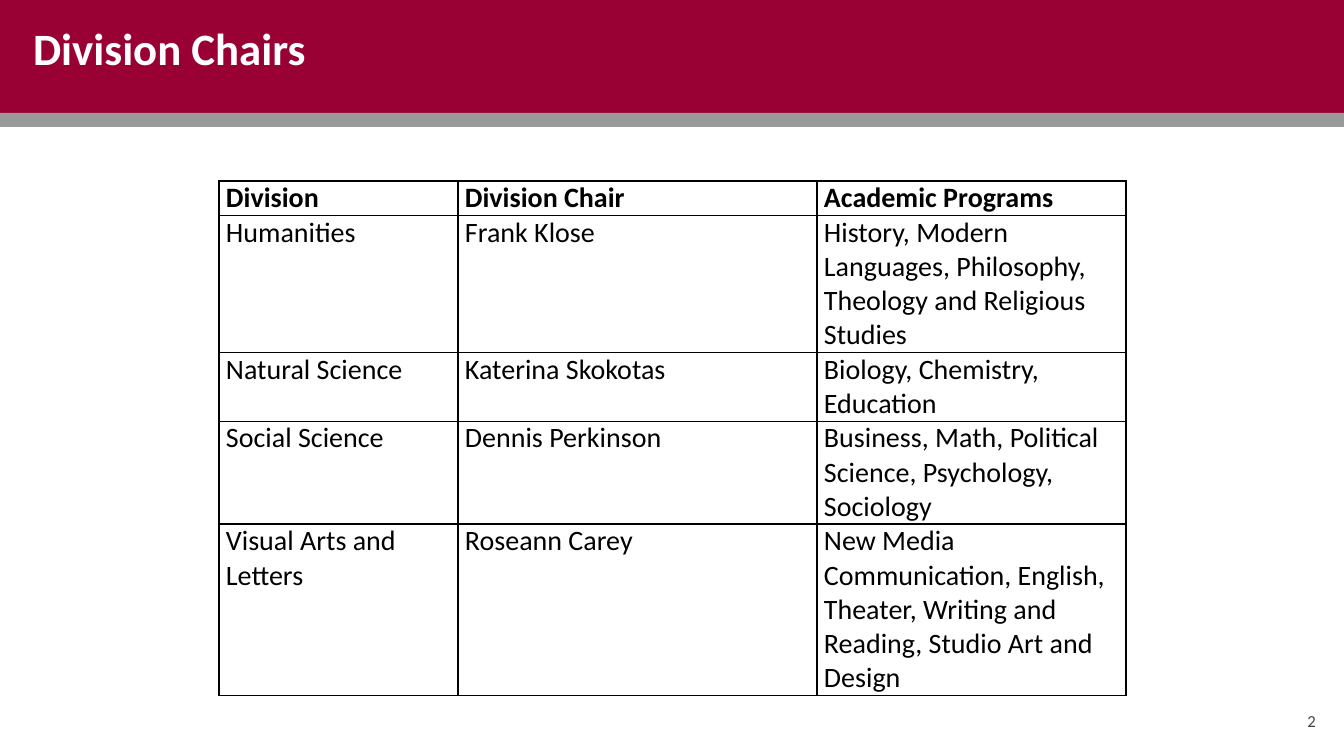
from lxml import etree
from pptx import Presentation
from pptx.dml.color import RGBColor
from pptx.enum.shapes import MSO_SHAPE as Shape
from pptx.enum.text import MSO_ANCHOR as Anchor, PP_ALIGN as Align
from pptx.oxml import parse_xml
from pptx.oxml.ns import nsdecls, qn
from pptx.util import Pt

TITLE = "Division Chairs"
PAGE_NUMBER = "2"
ROWS = [
    ("Division", "Division Chair", "Academic Programs"),
    ("Humanities", "Frank Klose",
     "History, Modern Languages, Philosophy, Theology and Religious Studies"),
    ("Natural Science", "Katerina Skokotas", "Biology, Chemistry, Education"),
    ("Social Science", "Dennis Perkinson",
     "Business, Math, Political Science, Psychology, Sociology"),
    ("Visual Arts and Letters", "Roseann Carey",
     "New Media Communication, English, Theater, Writing and Reading, "
     "Studio Art and Design"),
]
ROW_LINES = (1, 4, 2, 3, 5)
COLUMN_WIDTHS = (239, 359, 309)
LINE_HEIGHT = 34
TABLE_LEFT, TABLE_TOP = 219, 181

CRIMSON = RGBColor(0x99, 0x00, 0x33)
GRAY = RGBColor(0x99, 0x99, 0x99)
DARK_GRAY = RGBColor(0x43, 0x43, 0x43)
WHITE = RGBColor(0xFF, 0xFF, 0xFF)
BLACK = RGBColor(0x00, 0x00, 0x00)
BANDS = [((0, 0, 1344, 113), CRIMSON), ((0, 113, 1344, 14), GRAY)]
FONT = "Calibri"


def px(length):
    return round(length * 914400 / 100.8)


def place(lengths):
    return [px(length) for length in lengths]


def style(para, size, color, bold=False):
    for span in para.runs:
        span.font.name = FONT
        span.font.size = Pt(size)
        span.font.bold = bold
        span.font.color.rgb = color


def fill_frame(frame, text, size, color, anchor, align, bold=False):
    frame.word_wrap = True
    frame.vertical_anchor = anchor
    frame.margin_left = frame.margin_right = px(10)
    frame.margin_top = frame.margin_bottom = px(10)
    frame.text = text
    para = frame.paragraphs[0]
    para.alignment = align
    style(para, size, color, bold)


def add_borders(cell):
    properties = cell._tc.get_or_add_tcPr()
    for position, side in enumerate(("lnL", "lnR", "lnT", "lnB")):
        line = parse_xml(f'<a:{side} {nsdecls("a")} w="{Pt(1)}"/>')
        fill = etree.SubElement(line, qn("a:solidFill"))
        etree.SubElement(fill, qn("a:srgbClr"), val=str(BLACK))
        properties.insert(position, line)


def add_division_table(page):
    heights = [lines * LINE_HEIGHT for lines in ROW_LINES]
    area = place((TABLE_LEFT, TABLE_TOP, sum(COLUMN_WIDTHS), sum(heights)))
    table = page.shapes.add_table(len(ROWS), len(COLUMN_WIDTHS), *area).table
    table.horz_banding = False
    for column, width in zip(table.columns, COLUMN_WIDTHS):
        column.width = px(width)
    for row, height, texts in zip(table.rows, heights, ROWS):
        row.height = px(height)
        for cell, text in zip(row.cells, texts):
            cell.margin_left = cell.margin_right = px(7)
            cell.margin_top = cell.margin_bottom = 0
            cell.fill.background()
            add_borders(cell)
            cell.text = text
            style(cell.text_frame.paragraphs[0], 20, BLACK, texts is ROWS[0])


def main():
    """Build the division chairs slide."""
    deck = Presentation()
    deck.slide_width, deck.slide_height = px(1344), px(756)
    page = deck.slides.add_slide(deck.slide_layouts[5])
    title = page.shapes.title
    for area, color in BANDS:
        band = page.shapes.add_shape(Shape.RECTANGLE, *place(area))
        band.shadow.inherit = False
        band.fill.solid()
        band.fill.fore_color.rgb = color
        band.line.fill.background()
        title._element.addprevious(band._element)
    title.left, title.top, title.width, title.height = place((23, 11, 1252, 85))
    fill_frame(title.text_frame, TITLE, 32, WHITE, Anchor.TOP, Align.LEFT, True)
    add_division_table(page)
    number = page.shapes.add_textbox(*place((1245, 698, 81, 45)))
    fill_frame(number.text_frame, PAGE_NUMBER, 12, DARK_GRAY,
               Anchor.MIDDLE, Align.RIGHT)
    deck.save("out.pptx")


if __name__ == "__main__":
    main()
